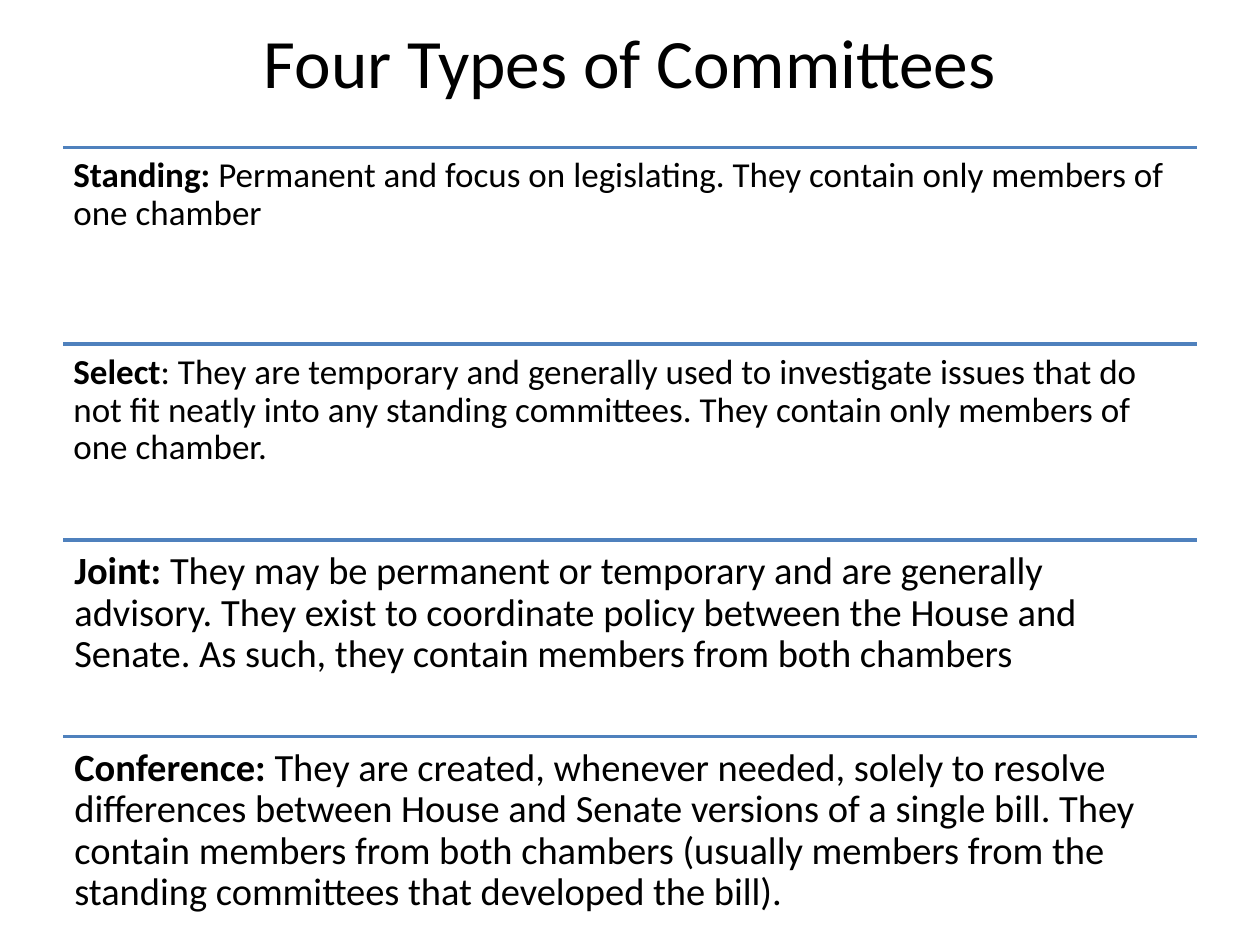
from lxml import etree
from pptx import Presentation
from pptx.dml.color import RGBColor
from pptx.enum import shapes, text
from pptx.oxml.ns import qn
from pptx.util import Cm, Pt


def color(code):
    return RGBColor.from_string(code)


def write(par, words, size=20, bold=False, ink="000000"):
    run = par.add_run()
    run.text = words
    font = run.font
    font.name = "Calibri"
    font.size = Pt(size)
    font.bold = bold
    font.color.rgb = color(ink)


deck = Presentation()
deck.slide_width, deck.slide_height = Cm(25.4), Cm(19.05)
slide = deck.slides.add_slide(deck.slide_layouts[5])

left, wide = Cm(1.27), Cm(22.86)
top, step = Cm(2.97), Cm(3.96)

title = slide.shapes.title
title.left, title.top, title.width, title.height = left, Cm(0.76), wide, Cm(0.94)
frame = title.text_frame
frame.auto_size = text.MSO_AUTO_SIZE.NONE
frame.vertical_anchor = text.MSO_ANCHOR.MIDDLE
frame.paragraphs[0].alignment = text.PP_ALIGN.CENTER
write(frame.paragraphs[0], "Four Types of Committees", size=39.6)

kinds = [
    ("Standing:", " Permanent and focus on legislating. They contain only members of one chamber", 20, 0.21),
    ("Select", ": They are temporary and generally used to investigate issues that do not fit neatly into any standing committees. They contain only members of one chamber.", 20, 0.21),
    ("Joint:", " They may be permanent or temporary and are generally advisory. They exist to coordinate policy between the House and Senate. As such, they contain members from both chambers", 22, 0.23),
    ("Conference:", " They are created, whenever needed, solely to resolve differences between House and Senate versions of a single bill. They contain members from both chambers (usually members from the standing committees that developed the bill).", 22, 0.23),
]

group = slide.shapes.add_group_shape()
for row, (name, role, size, pad) in enumerate(kinds):
    y = top + row * step
    rule = group.shapes.add_connector(shapes.MSO_CONNECTOR.STRAIGHT, left, y, left + wide, y)
    rule.line.color.rgb = color("4F81BD")
    rule.line.width = Pt(2)
    etree.SubElement(rule._element.spPr, qn("a:effectLst"))

    frame = group.shapes.add_textbox(left, y, wide, step).text_frame
    frame.word_wrap = True
    frame.vertical_anchor = text.MSO_ANCHOR.TOP
    frame.margin_left = frame.margin_right = Cm(pad)
    frame.margin_top = frame.margin_bottom = Cm(pad)
    par = frame.paragraphs[0]
    par.line_spacing = 0.9
    write(par, name, size=size, bold=True)
    write(par, role, size=size)

deck.save("out.pptx")
